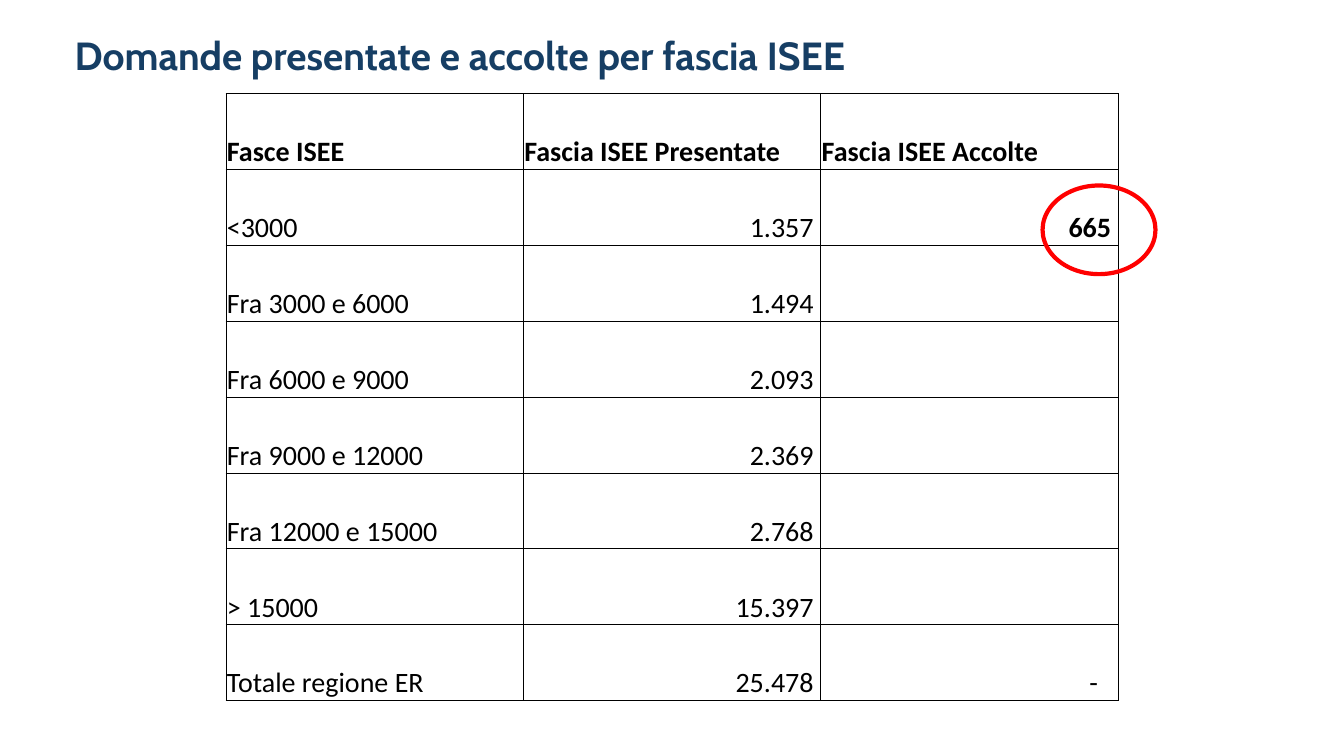
from dataclasses import dataclass

from lxml import etree
from pptx import Presentation
from pptx.dml.color import RGBColor
from pptx.enum.shapes import MSO_SHAPE
from pptx.enum.text import MSO_ANCHOR, PP_ALIGN
from pptx.oxml.ns import qn
from pptx.slide import Slide
from pptx.table import _Cell
from pptx.util import Inches, Pt

LEFT, RIGHT = PP_ALIGN.LEFT, PP_ALIGN.RIGHT
BOTTOM, MIDDLE = MSO_ANCHOR.BOTTOM, MSO_ANCHOR.MIDDLE
ELLIPSE = MSO_SHAPE.OVAL
TITLE_ONLY = 5

NAVY, BLACK, RED = "163E64", "000000", "FF0000"
COLUMN_WIDTH, ROW_HEIGHT = 2.95, 0.7525
BORDER_WIDTH = Pt(0.5)


@dataclass
class Entry:
    """Content of one table cell; right_margin is in inches."""
    text: str = ""
    bold: bool = False
    align: PP_ALIGN = LEFT
    right_margin: float = 0.01


def figure(text: str, bold: bool = False, right_margin: float = 0.07) -> Entry:
    return Entry(text, bold, RIGHT, right_margin)


HEADER = [Entry(text, bold=True) for text in
          ("Fasce ISEE", "Fascia ISEE Presentate", "Fascia ISEE Accolte")]
BANDS = [
    ("<3000", "1.357", figure("665", bold=True)),
    ("Fra 3000 e 6000", "1.494", Entry()),
    ("Fra 6000 e 9000", "2.093", Entry()),
    ("Fra 9000 e 12000", "2.369", Entry()),
    ("Fra 12000 e 15000", "2.768", Entry()),
    ("> 15000", "15.397", Entry()),
    ("Totale regione ER", "25.478", figure("-", right_margin=0.2)),
]
ROWS = [HEADER] + [[Entry(band), figure(submitted), accepted]
                   for band, submitted, accepted in BANDS]


def color(hex_value: str) -> RGBColor:
    return RGBColor.from_string(hex_value)


def set_font(font, name: str, size: float, bold: bool, hex_value: str) -> None:
    values = {"name": name, "size": Pt(size), "bold": bold}
    for attribute, value in values.items():
        setattr(font, attribute, value)
    font.color.rgb = color(hex_value)


def add_borders(cell: _Cell) -> None:
    """Draw all four sides; border elements must precede the cell fill."""
    properties = cell._tc.get_or_add_tcPr()
    for position, side in enumerate(("a:lnL", "a:lnR", "a:lnT", "a:lnB")):
        border = etree.Element(qn(side), w=str(BORDER_WIDTH))
        fill = etree.SubElement(border, qn("a:solidFill"))
        etree.SubElement(fill, qn("a:srgbClr"), val=BLACK)
        properties.insert(position, border)


def fill_cell(cell: _Cell, entry: Entry) -> None:
    layout = {
        "vertical_anchor": BOTTOM,
        "margin_left": Inches(0.01),
        "margin_right": Inches(entry.right_margin),
        "margin_top": Inches(0.01),
        "margin_bottom": 0,
    }
    for attribute, value in layout.items():
        setattr(cell, attribute, value)
    cell.fill.background()
    add_borders(cell)
    if entry.text:
        para = cell.text_frame.paragraphs[0]
        para.alignment = entry.align
        span = para.add_run()
        span.text = entry.text
        set_font(span.font, "Calibri", 20, entry.bold, BLACK)


def add_title(page: Slide, text: str) -> None:
    title = page.shapes.title
    title.left, title.top = Inches(0.64), Inches(0.22)
    title.width, title.height = Inches(12.21), Inches(0.7)
    title.text_frame.vertical_anchor = MIDDLE
    title.text_frame.word_wrap = True
    para = title.text_frame.paragraphs[0]
    para.alignment = LEFT
    para.line_spacing = 0.9
    span = para.add_run()
    span.text = text
    set_font(span.font, "Cabin", 28, True, NAVY)


def add_band_table(page: Slide) -> None:
    columns = len(HEADER)
    table = page.shapes.add_table(
        len(ROWS), columns, Inches(2.24), Inches(0.93),
        Inches(COLUMN_WIDTH * columns), Inches(ROW_HEIGHT * len(ROWS))).table
    table.first_row = table.horz_banding = False
    for row_index, entries in enumerate(ROWS):
        for column_index, entry in enumerate(entries):
            fill_cell(table.cell(row_index, column_index), entry)


def add_highlight(page: Slide) -> None:
    ring = page.shapes.add_shape(
        ELLIPSE, Inches(10.34), Inches(1.84), Inches(1.12), Inches(0.88))
    ring.shadow.inherit = False
    ring.fill.background()
    ring.line.color.rgb = color(RED)
    ring.line.width = Pt(3)


def main() -> None:
    deck = Presentation()
    deck.slide_width, deck.slide_height = Inches(13.33), Inches(7.5)
    page = deck.slides.add_slide(deck.slide_layouts[TITLE_ONLY])
    add_title(page, "Domande presentate e accolte per fascia ISEE")
    add_band_table(page)
    add_highlight(page)
    deck.save("out.pptx")


if __name__ == "__main__":
    main()
